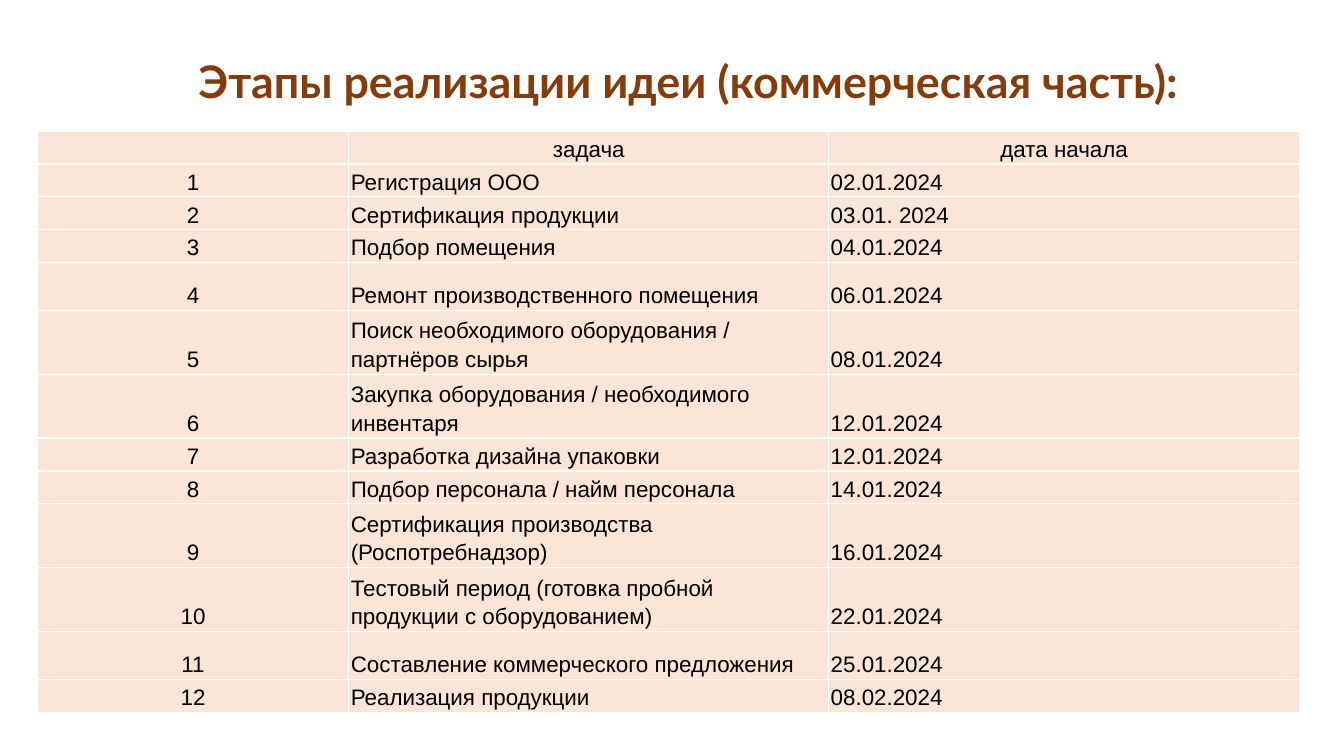
from lxml.etree import SubElement
from pptx import Presentation
from pptx.dml.color import RGBColor
from pptx.enum.text import MSO_ANCHOR as Anchor, MSO_AUTO_SIZE as AutoSize, PP_ALIGN as Align
from pptx.oxml.ns import qn
from pptx.util import Inches, Pt

TITLE = "Этапы реализации идеи (коммерческая часть):"
HEADER = ("", "задача", "дата начала")
SINGLE, TALL, DOUBLE = 23.4, 34.2, 44.1  # row heights in points
COLUMNS = (3.09, 4.76, 4.67)
STAGES = (
    ("Регистрация ООО", "02.01.2024", SINGLE),
    ("Сертификация продукции", "03.01. 2024", SINGLE),
    ("Подбор помещения", "04.01.2024", SINGLE),
    ("Ремонт производственного помещения", "06.01.2024", TALL),
    ("Поиск необходимого оборудования / партнёров сырья", "08.01.2024", DOUBLE),
    ("Закупка оборудования / необходимого инвентаря", "12.01.2024", DOUBLE),
    ("Разработка дизайна упаковки", "12.01.2024", SINGLE),
    ("Подбор персонала / найм персонала", "14.01.2024", SINGLE),
    ("Сертификация производства (Роспотребнадзор)", "16.01.2024", DOUBLE),
    ("Тестовый период (готовка пробной продукции с оборудованием)", "22.01.2024", DOUBLE),
    ("Составление коммерческого предложения", "25.01.2024", TALL),
    ("Реализация продукции", "08.02.2024", SINGLE),
)


def color(value):
    return RGBColor.from_string(value)


def style_font(font, name, size, value, bold=False):
    font.name, font.size, font.bold = name, Pt(size), bold
    font.color.rgb = color(value)


def add_title(page):
    title = page.shapes.title
    title.left, title.top, title.width, title.height = map(Inches, (0.53, 0.48, 12.6, 0.64))
    frame = title.text_frame
    frame.text = TITLE
    frame.word_wrap = True
    frame.auto_size = AutoSize.SHAPE_TO_FIT_TEXT
    frame.vertical_anchor = Anchor.TOP
    para = frame.paragraphs[0]
    para.alignment = Align.CENTER
    style_font(para.runs[0].font, "Lato", 32, "843C0B", bold=True)


def add_borders(cell, value, width):
    properties = cell._tc.get_or_add_tcPr()
    for side in ("a:lnL", "a:lnR", "a:lnT", "a:lnB"):
        line = SubElement(properties, qn(side), w=str(Pt(width)))
        fill = SubElement(line, qn("a:solidFill"))
        SubElement(fill, qn("a:srgbClr"), val=value)


def fill_cell(cell, text, centered):
    add_borders(cell, "FFFFFF", 1)
    cell.fill.solid()
    cell.fill.fore_color.rgb = color("FBE5D6")
    cell.vertical_anchor = Anchor.BOTTOM
    cell.margin_left = cell.margin_right = cell.margin_bottom = Inches(0.02)
    cell.margin_top = 0
    para = cell.text_frame.paragraphs[0]
    para.alignment = Align.CENTER if centered else Align.LEFT
    para.line_spacing = 1.15
    span = para.add_run()
    span.text = text
    style_font(span.font, "Arial", 16, "000000")


def add_stage_table(page):
    rows = [HEADER] + [(str(number), task, date)
                       for number, (task, date, _) in enumerate(STAGES, 1)]
    heights = [SINGLE] + [height for _, _, height in STAGES]
    box = page.shapes.add_table(len(rows), len(COLUMNS), Inches(0.37), Inches(1.3),
                                Inches(sum(COLUMNS)), Pt(sum(heights)))
    table = box.table
    table.first_row = table.horz_banding = False
    for column, width in zip(table.columns, COLUMNS):
        column.width = Inches(width)
    for row_index, (row, height, texts) in enumerate(zip(table.rows, heights, rows)):
        row.height = Pt(height)
        for column_index, (cell, text) in enumerate(zip(row.cells, texts)):
            fill_cell(cell, text, centered=row_index == 0 or column_index == 0)


def main():
    deck = Presentation()
    deck.slide_width, deck.slide_height = Inches(13.33), Inches(7.5)
    page = deck.slides.add_slide(deck.slide_layouts.get_by_name("Title Only"))
    add_title(page)
    add_stage_table(page)
    deck.save("out.pptx")


if __name__ == "__main__":
    main()
